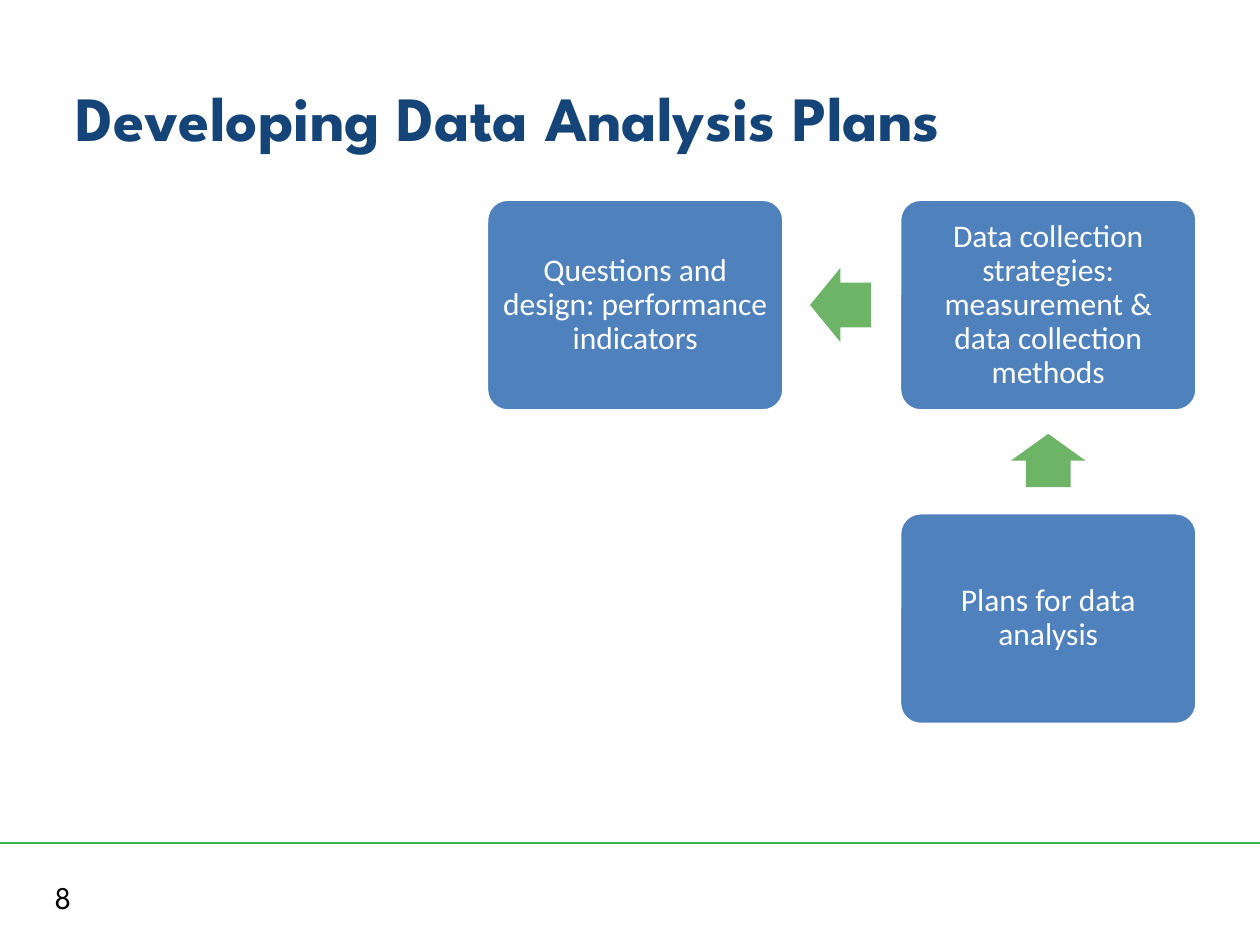
from dataclasses import dataclass

from lxml.etree import SubElement
from pptx import Presentation
from pptx.dml.color import RGBColor
from pptx.enum.shapes import MSO_CONNECTOR, MSO_SHAPE
from pptx.enum.text import MSO_ANCHOR as Anchor, PP_ALIGN as Align
from pptx.oxml.ns import qn
from pptx.util import Pt


@dataclass(frozen=True)
class Theme:
    title_color: RGBColor = RGBColor(0x15, 0x45, 0x78)
    rule_color: RGBColor = RGBColor(0x39, 0xB5, 0x4A)
    box_color: RGBColor = RGBColor(0x4F, 0x81, 0xBD)
    arrow_color: RGBColor = RGBColor(0x6D, 0xB4, 0x67)
    white: RGBColor = RGBColor(0xFF, 0xFF, 0xFF)
    black: RGBColor = RGBColor(0, 0, 0)
    heading_font: str = "League Spartan"
    body_font: str = "Calibri"
    title_size: int = 36
    body_size: int = 18


THEME = Theme()

SLIDE_WIDTH, SLIDE_HEIGHT = 720, 540
BOX_WIDTH, BOX_HEIGHT = 170, 121
GRID_LEFT, GRID_TOP = 278, 113.8
COLUMN_STEP, ROW_STEP = 236, 179.2
ARROW_BREADTH = 42.5
ARROW_LEAN = 0.7  # arrows sit slightly nearer the box they point to

# column, row, text
BOXES = [
    (1, 1, "Plans for data analysis"),
    (1, 0, "Data collection strategies: measurement & data collection methods"),
    (0, 0, "Questions and design: performance indicators"),
]


def style_text(text_frame, text, font_name, size, color, bold=False):
    text_frame.word_wrap = True
    text_frame.text = text
    font = text_frame.paragraphs[0].runs[0].font
    font.name, font.size, font.bold = font_name, Pt(size), bold
    font.color.rgb = color


def add_text(slide, left, top, width, height, text, size, color, bold=False):
    shape = slide.shapes.add_textbox(Pt(left), Pt(top), Pt(width), Pt(height))
    style_text(shape.text_frame, text, THEME.heading_font, size, color, bold)
    shape.text_frame.vertical_anchor = Anchor.MIDDLE


def add_rule(slide, y):
    rule = slide.shapes.add_connector(
        MSO_CONNECTOR.STRAIGHT, Pt(0), Pt(y), Pt(SLIDE_WIDTH), Pt(y))
    rule.line.color.rgb = THEME.rule_color
    rule.line.width = Pt(1.5)
    SubElement(rule._element.spPr, qn("a:effectLst"))


def box_position(column, row):
    return GRID_LEFT + column * COLUMN_STEP, GRID_TOP + row * ROW_STEP


def add_box(slide, column, row, text):
    left, top = box_position(column, row)
    box = slide.shapes.add_shape(
        MSO_SHAPE.ROUNDED_RECTANGLE, Pt(left), Pt(top), Pt(BOX_WIDTH), Pt(BOX_HEIGHT))
    box.shadow.inherit = False
    box.adjustments[0] = 0.1
    box.fill.solid()
    box.fill.fore_color.rgb = THEME.box_color
    box.line.color.rgb = THEME.white
    box.line.width = Pt(2)
    frame = box.text_frame
    frame.margin_left = frame.margin_right = Pt(5)
    frame.margin_top = frame.margin_bottom = Pt(5)
    frame.vertical_anchor = Anchor.MIDDLE
    style_text(frame, text, THEME.body_font, THEME.body_size, THEME.white)
    frame.paragraphs[0].alignment = Align.CENTER
    frame.paragraphs[0].line_spacing = 0.9


def add_arrow(slide, kind, center_x, center_y, width, height):
    arrow = slide.shapes.add_shape(
        kind, Pt(center_x - width / 2), Pt(center_y - height / 2), Pt(width), Pt(height))
    arrow.shadow.inherit = False
    arrow.adjustments[0], arrow.adjustments[1] = 0.6, 0.5
    arrow.fill.solid()
    arrow.fill.fore_color.rgb = THEME.arrow_color
    arrow.line.fill.background()


def add_flow(slide):
    for column, row, text in BOXES:
        add_box(slide, column, row, text)
    left, top = box_position(1, 0)
    middle_x, middle_y = left + BOX_WIDTH / 2, top + BOX_HEIGHT / 2
    row_gap_center = top + (BOX_HEIGHT + ROW_STEP) / 2
    column_gap_center = left - (COLUMN_STEP - BOX_WIDTH) / 2
    add_arrow(slide, MSO_SHAPE.UP_ARROW, middle_x, row_gap_center - ARROW_LEAN,
              ARROW_BREADTH, 30.5)
    add_arrow(slide, MSO_SHAPE.LEFT_ARROW, column_gap_center - ARROW_LEAN, middle_y,
              34.8, ARROW_BREADTH)


def main():
    presentation = Presentation()
    presentation.slide_width = Pt(SLIDE_WIDTH)
    presentation.slide_height = Pt(SLIDE_HEIGHT)
    slide = presentation.slides.add_slide(presentation.slide_layouts[6])
    add_rule(slide, 481.7)
    add_text(slide, 24, 498.2, 168, 29, "8", THEME.body_size, THEME.black)
    add_text(slide, 36, 21.6, 648, 90, "Developing Data Analysis Plans",
             THEME.title_size, THEME.title_color, bold=True)
    add_flow(slide)
    presentation.save("out.pptx")


if __name__ == "__main__":
    main()
